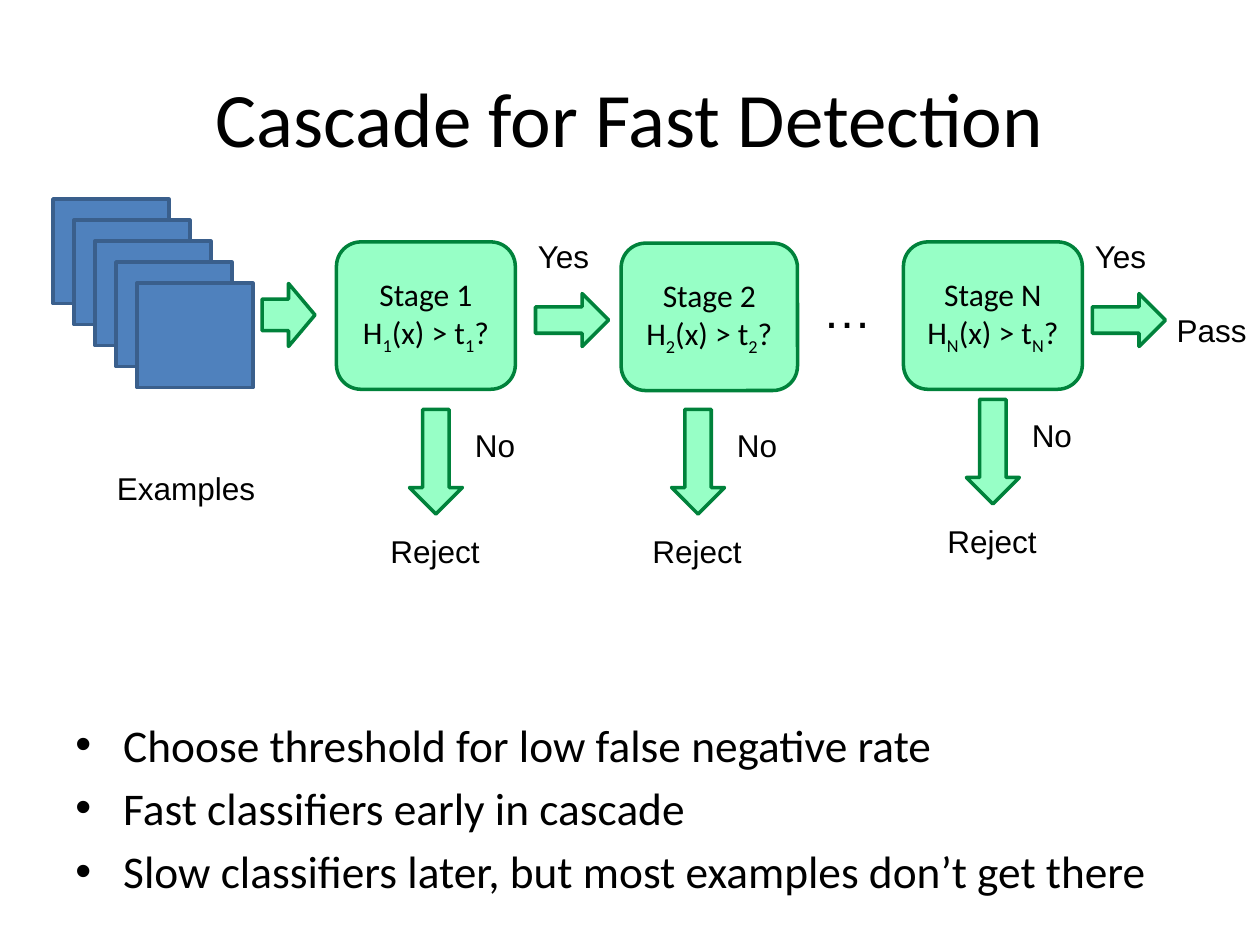
from dataclasses import dataclass

from lxml.etree import SubElement
from pptx import Presentation
from pptx.dml.color import RGBColor
from pptx.enum.shapes import MSO_SHAPE
from pptx.enum.text import MSO_ANCHOR, MSO_AUTO_SIZE, PP_ALIGN
from pptx.oxml.ns import qn
from pptx.util import Inches, Pt


@dataclass(frozen=True)
class Theme:
    text: str = "000000"
    example_fill: str = "4F81BD"
    example_line: str = "3A5F8C"
    stage_fill: str = "97FFC6"
    stage_line: str = "00823B"
    heading_font: str = "Calibri"
    label_font: str = "Arial"
    title: float = 44
    bullet: float = 25.9
    ellipsis: float = 28
    label: float = 18
    outline: float = 2


THEME = Theme()

TITLE = "Cascade for Fast Detection"
BULLETS = [
    "Choose threshold for low false negative rate",
    "Fast classifiers early in cascade",
    "Slow classifiers later, but most examples don’t get there",
]
# name, box (left, top, width, height), top-left of its reject arrow
STAGES = [
    ("1", (2.67, 1.92, 1.42, 1.17), (3.25, 3.25)),
    ("2", (4.93, 1.93, 1.4, 1.17), (5.33, 3.25)),
    ("N", (7.17, 1.92, 1.42, 1.17), (7.67, 3.17)),
]
YES_ARROWS = [(4.25, 2.33), (8.67, 2.33)]
EXAMPLE_COUNT = 5
EXAMPLE_START = (0.42, 1.58)
EXAMPLE_SIZE = (0.92, 0.83)
EXAMPLE_STEP = 1 / 6


def add_run(p, text, size, font, subscript=False):
    r = p.add_run()
    r.text = text
    r.font.size = Pt(size)
    r.font.name = font
    r.font.color.rgb = RGBColor.from_string(THEME.text)
    if subscript:
        r.font._element.set("baseline", "-25000")


def add_box(s, preset, box, fill, line):
    sp = s.shapes.add_shape(preset, *map(Inches, box))
    sp.shadow.inherit = False
    sp.fill.solid()
    sp.fill.fore_color.rgb = RGBColor.from_string(fill)
    sp.line.color.rgb = RGBColor.from_string(line)
    sp.line.width = Pt(THEME.outline)
    return sp


def add_green(s, preset, box):
    return add_box(s, preset, box, THEME.stage_fill, THEME.stage_line)


def add_label(s, text, left, top, width, height=0.4, size=THEME.label):
    tf = s.shapes.add_textbox(*map(Inches, (left, top, width, height))).text_frame
    tf.word_wrap = False
    tf.auto_size = MSO_AUTO_SIZE.SHAPE_TO_FIT_TEXT
    add_run(tf.paragraphs[0], text, size, THEME.label_font)


def add_title(s):
    tf = s.shapes.add_textbox(*map(Inches, (0.5, 0.3, 9, 1.25))).text_frame
    tf.word_wrap = True
    tf.vertical_anchor = MSO_ANCHOR.MIDDLE
    p = tf.paragraphs[0]
    p.alignment = PP_ALIGN.CENTER
    add_run(p, TITLE, THEME.title, THEME.heading_font)


def add_examples(s):
    left, top = EXAMPLE_START
    for i in range(EXAMPLE_COUNT):
        shift = i * EXAMPLE_STEP
        add_box(s, MSO_SHAPE.RECTANGLE, (left + shift, top + shift, *EXAMPLE_SIZE),
                THEME.example_fill, THEME.example_line)
    add_label(s, "Examples", 0.83, 3.67, 1.31)
    add_green(s, MSO_SHAPE.RIGHT_ARROW, (2.08, 2.25, 0.42, 0.5))


def add_stage(s, name, box):
    tf = add_green(s, MSO_SHAPE.ROUNDED_RECTANGLE, box).text_frame
    tf.word_wrap = True
    tf.vertical_anchor = MSO_ANCHOR.MIDDLE
    lines = [
        [(f"Stage {name}", False)],
        [("H", False), (name, True), ("(x) > t", False), (name, True), ("?", False)],
    ]
    for i, runs in enumerate(lines):
        p = tf.add_paragraph() if i else tf.paragraphs[0]
        p.alignment = PP_ALIGN.CENTER
        for text, subscript in runs:
            add_run(p, text, THEME.label, THEME.heading_font, subscript)


def add_reject(s, left, top):
    add_green(s, MSO_SHAPE.DOWN_ARROW, (left, top, 0.42, 0.83))
    add_label(s, "No", left + 0.42, top + 0.08, 0.52)
    add_label(s, "Reject", left - 0.25, top + 0.92, 0.92)


def add_yes(s, left, top):
    add_green(s, MSO_SHAPE.RIGHT_ARROW, (left, top, 0.58, 0.42))
    add_label(s, "Yes", left - 0.08, top - 0.5, 0.61)


def add_bullets(s):
    tf = s.shapes.add_textbox(*map(Inches, (0.5, 5.64, 9, 1.55))).text_frame
    tf.word_wrap = True
    for i, text in enumerate(BULLETS):
        p = tf.add_paragraph() if i else tf.paragraphs[0]
        p.space_after = Pt(5)
        pPr = p._p.get_or_add_pPr()
        pPr.set("marL", str(Inches(0.38)))
        pPr.set("indent", str(Inches(-0.38)))
        SubElement(pPr, qn("a:buFont")).set("typeface", THEME.label_font)
        SubElement(pPr, qn("a:buChar")).set("char", "•")
        add_run(p, text, THEME.bullet, THEME.heading_font)


def main():
    prs = Presentation()
    prs.slide_width, prs.slide_height = Inches(10), Inches(7.5)
    s = prs.slides.add_slide(prs.slide_layouts[6])
    add_title(s)
    add_examples(s)
    for name, box, reject in STAGES:
        add_stage(s, name, box)
        add_reject(s, *reject)
    for spot in YES_ARROWS:
        add_yes(s, *spot)
    add_label(s, "…", 6.43, 2.17, 0.6, 0.57, THEME.ellipsis)
    add_label(s, "Pass", 9.24, 2.42, 0.76)
    add_bullets(s)
    prs.save("out.pptx")


if __name__ == "__main__":
    main()
